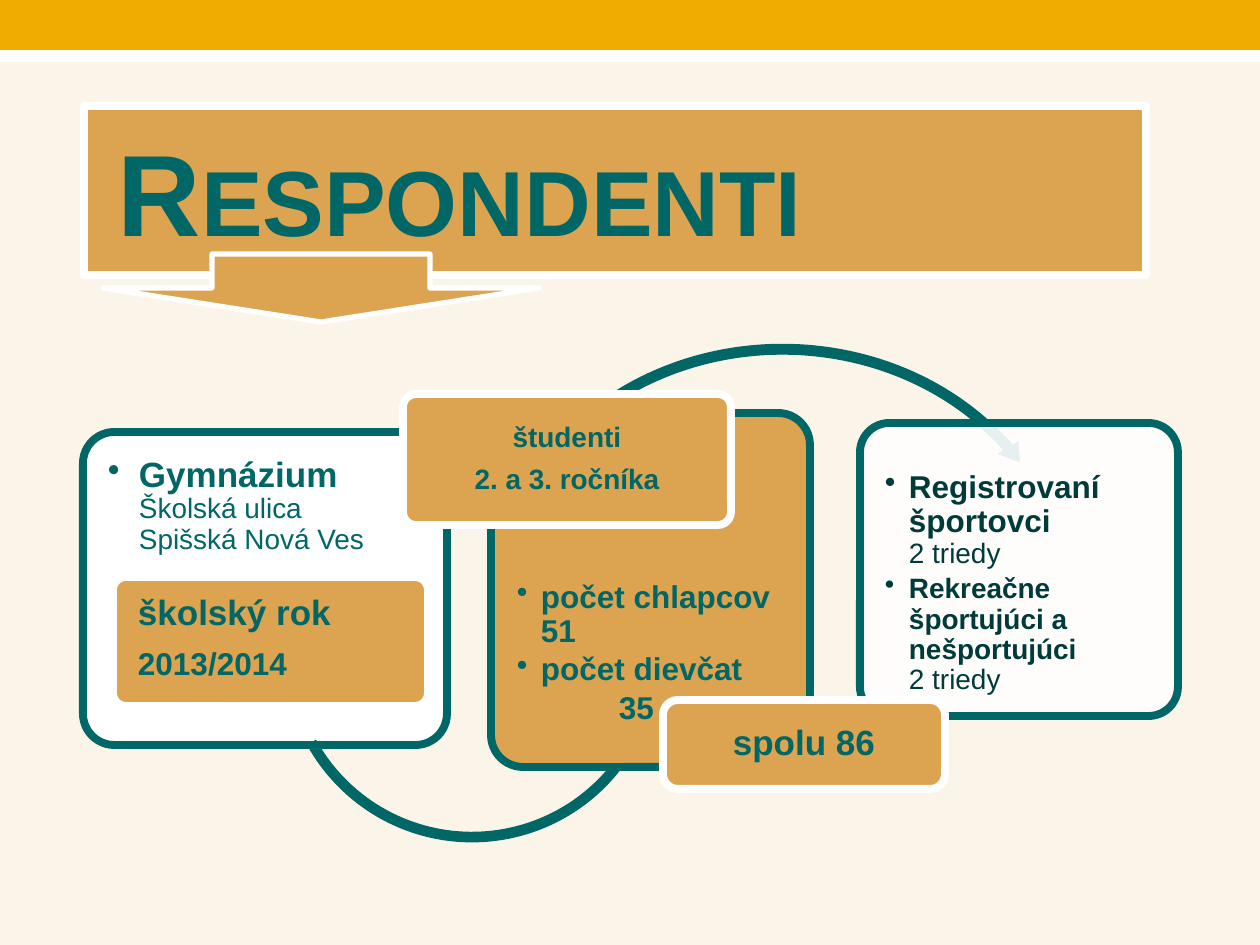
from dataclasses import dataclass

from lxml.etree import SubElement
from pptx import Presentation
from pptx.dml.color import RGBColor
from pptx.enum.shapes import MSO_SHAPE as Kind
from pptx.enum.text import MSO_ANCHOR as Anchor, PP_ALIGN as Align
from pptx.oxml.ns import qn
from pptx.util import Emu, Pt

SCALE = 914400 / 126  # EMU in one px


@dataclass(frozen=True)
class Theme:
    font: str = "Arial"
    back: str = "FBF4E9"
    bar: str = "F0AD00"
    sand: str = "DCA350"
    teal: str = "006666"
    dark: str = "003B3A"
    white: str = "FFFFFF"
    title: int = 66
    head: int = 20
    body: int = 18
    small: int = 16
    thick: float = 4.5
    mid: float = 3
    thin: float = 0.75


T = Theme()


@dataclass(frozen=True)
class Box:
    x: int
    y: int
    w: int
    h: int


@dataclass(frozen=True)
class Form:
    kind: Kind
    box: Box
    fill: str
    line: str = ""
    width: float = T.thick
    adj: tuple[float, ...] = ()
    turn: float = 0
    alpha: int = 100


@dataclass(frozen=True)
class Para:
    """Lines of one paragraph: the first is bold, the rest plain at small size."""
    lines: tuple[str, ...]
    size: int
    indent: int = 0
    bullet: bool = True


@dataclass(frozen=True)
class Block:
    box: Box
    paras: tuple[Para, ...]
    color: str = T.teal
    gap: float = 0.17


def px(n: float) -> Emu:
    return Emu(round(n * SCALE))


def rgb(code: str) -> RGBColor:
    return RGBColor.from_string(code)


def place(box: Box) -> tuple[Emu, ...]:
    return px(box.x), px(box.y), px(box.w), px(box.h)


def draw(slide, form: Form):
    shape = slide.shapes.add_shape(form.kind, *place(form.box))
    shape.shadow.inherit = False
    shape.rotation = form.turn
    for i, value in enumerate(form.adj):
        shape.adjustments[i] = value
    shape.fill.solid()
    shape.fill.fore_color.rgb = rgb(form.fill)
    if form.alpha < 100:
        color = shape._element.spPr.find(qn("a:solidFill"))[0]
        SubElement(color, qn("a:alpha"), val=str(form.alpha * 1000))
    if form.line:
        shape.line.color.rgb = rgb(form.line)
        shape.line.width = Pt(form.width)
    else:
        shape.line.fill.background()
    return shape


def style(para, size: int, color: str, gap: float) -> None:
    para.font.name = T.font
    para.font.size = Pt(size)
    para.font.color.rgb = rgb(color)
    para.line_spacing = 0.9
    para.space_after = Pt(round(size * gap, 1))


def label(shape, lines: tuple[str, ...], size: int) -> None:
    """Centred bold text inside a shape."""
    frame = shape.text_frame
    frame.vertical_anchor = Anchor.MIDDLE
    frame.text = "\n".join(lines)
    for para in frame.paragraphs:
        style(para, size, T.teal, 0.4)
        para.font.bold = True
        para.alignment = Align.CENTER


def write(slide, block: Block) -> None:
    frame = slide.shapes.add_textbox(*place(block.box)).text_frame
    frame.word_wrap = True
    frame.margin_left = frame.margin_right = 0
    frame.margin_top = frame.margin_bottom = 0
    for i, item in enumerate(block.paras):
        para = frame.add_paragraph() if i else frame.paragraphs[0]
        style(para, item.size, block.color, block.gap)
        props = para._p.get_or_add_pPr()
        props.set("marL", str(px(item.indent)))
        if item.bullet:
            props.set("indent", str(-px(item.indent)))
            mark = SubElement(props, qn("a:buChar"), char="•")
            props.find(qn("a:defRPr")).addprevious(mark)
        for j, line in enumerate(item.lines):
            if j:
                para.add_line_break()
            run = para.add_run()
            run.text = line
            run.font.bold = j == 0
            if j:
                run.font.size = Pt(T.small)


def head(slide) -> None:
    shape = draw(slide, Form(Kind.RECTANGLE, Box(84, 106, 1062, 169), T.sand, T.white))
    frame = shape.text_frame
    frame.margin_left = px(34)
    frame.vertical_anchor = Anchor.MIDDLE
    para = frame.paragraphs[0]
    para.alignment = Align.LEFT
    para.font.name, para.font.size, para.font.bold = T.font, Pt(T.title), True
    para.font.color.rgb = rgb(T.teal)
    run = para.add_run()
    run.text = "Respondenti"
    run._r.get_or_add_rPr().set("cap", "small")
    draw(slide, Form(Kind.DOWN_ARROW, Box(103, 254, 436, 68), T.sand, T.white, T.mid))


def card(slide, box: Box, fill: str, line: str, alpha: int = 100):
    return draw(slide, Form(Kind.ROUNDED_RECTANGLE, box, fill, line, adj=(0.1,), alpha=alpha))


SCHOOL = Block(Box(108, 457, 315, 110), (
    Para(("Gymnázium", "Školská ulica", "Spišská Nová Ves"), T.head, 31),))
YEAR = Block(Box(138, 595, 280, 100), (
    Para(("školský rok",), T.head, bullet=False),
    Para(("2013/2014",), T.body, bullet=False)), gap=0.45)
COUNT = Block(Box(517, 581, 267, 145), (
    Para(("počet chlapcov 51",), T.body, 24),
    Para(("počet dievčat",), T.body, 24),
    Para(("35",), T.body, 102, False)), gap=0.15)
SPORT = Block(Box(885, 471, 270, 226), (
    Para(("Registrovaní športovci", "2 triedy"), T.body, 24),
    Para(("Rekreačne športujúci a nešportujúci", "2 triedy"), T.small, 24)), T.dark)
LOW = Form(Kind.LEFT_CIRCULAR_ARROW, Box(278, 460, 388, 388), T.teal, T.teal, T.thin,
           (0.024, 2.85, 28.455, 98.095, 0.028), 347.5)
HIGH = Form(Kind.CIRCULAR_ARROW, Box(485, 338, 595, 534), T.teal, T.teal, T.thin,
            (0.018, 2.177, 195.109, 124.796, 0.021))
TOTAL = Form(Kind.FLOWCHART_ALTERNATE_PROCESS, Box(663, 700, 282, 89), T.sand, T.white)


def main() -> None:
    deck = Presentation()
    deck.slide_width, deck.slide_height = px(1260), px(945)
    slide = deck.slides.add_slide(deck.slide_layouts[6])
    slide.background.fill.solid()
    slide.background.fill.fore_color.rgb = rgb(T.back)
    draw(slide, Form(Kind.RECTANGLE, Box(0, 30, 1260, 32), T.white))
    draw(slide, Form(Kind.RECTANGLE, Box(0, 0, 1260, 50), T.bar))

    card(slide, Box(83, 432, 364, 313), T.white, T.teal)
    write(slide, SCHOOL)
    draw(slide, LOW)
    card(slide, Box(113, 577, 315, 129), T.sand, T.white)
    write(slide, YEAR)

    card(slide, Box(491, 413, 319, 354), T.sand, T.teal)
    write(slide, COUNT)
    draw(slide, HIGH)
    year = card(slide, Box(403, 394, 328, 131), T.sand, T.white)
    label(year, ("študenti", "2. a 3. ročníka"), T.small)

    card(slide, Box(860, 423, 318, 293), T.white, T.teal, 90)
    write(slide, SPORT)
    label(draw(slide, TOTAL), ("spolu 86",), T.head)
    head(slide)
    deck.save("out.pptx")


if __name__ == "__main__":
    main()
